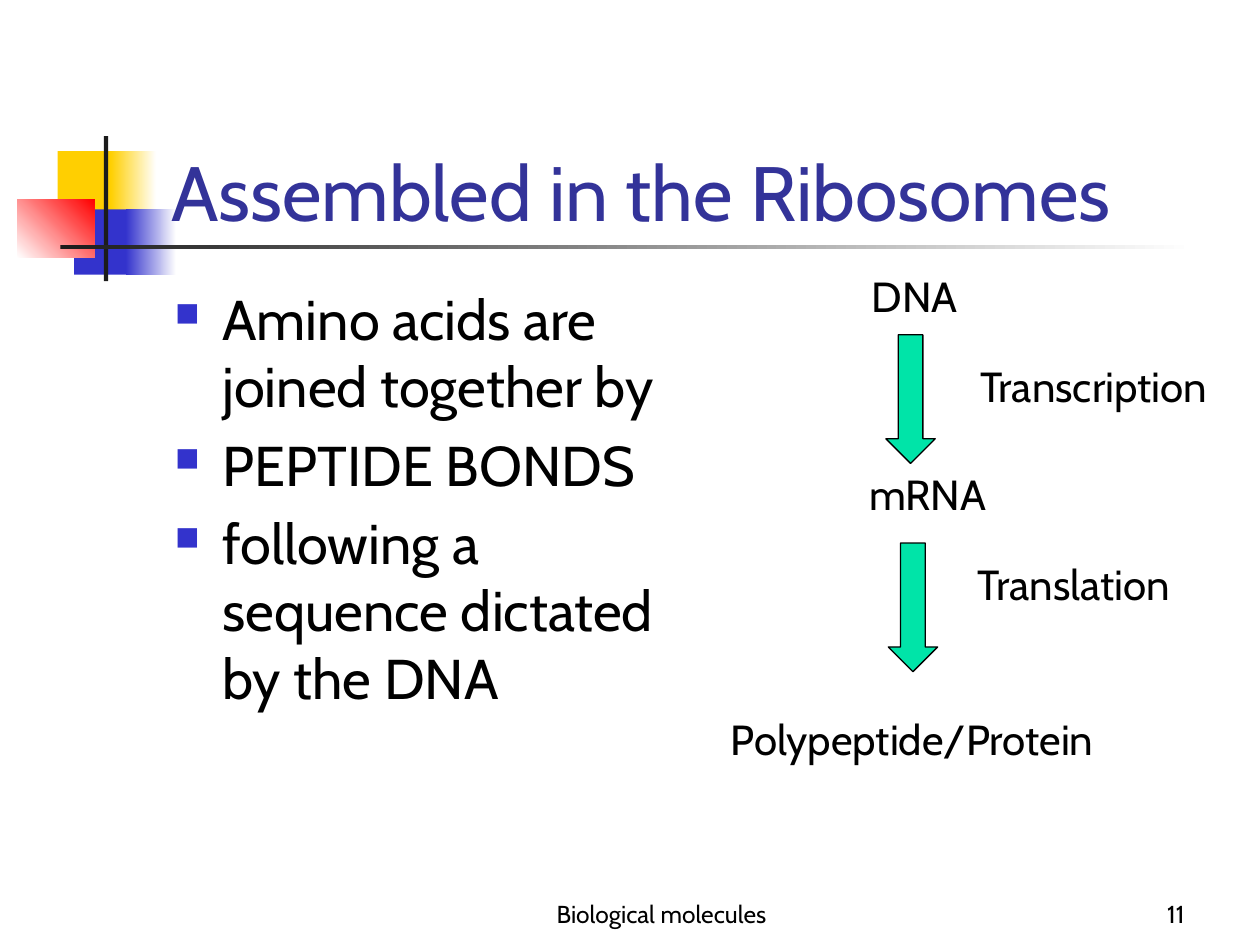
from dataclasses import dataclass
from lxml.etree import SubElement
from pptx import Presentation
from pptx.dml.color import RGBColor as RGB
from pptx.enum.shapes import MSO_SHAPE as Kind
from pptx.enum.text import MSO_ANCHOR as Anchor, PP_ALIGN as Align
from pptx.oxml.ns import qn
from pptx.util import Pt


@dataclass(frozen=True)
class Theme:
    """Hold the colours, font and type sizes."""
    font: str = "Cabin"
    ink: str = "000000"
    title: str = "333399"
    gold: str = "FFCF01"
    blue: str = "3333CC"
    red: str = "FF0000"
    dark: str = "1C1C1C"
    white: str = "FFFFFF"
    green: str = "00E4A8"
    head: int = 44
    body: int = 32
    label: int = 24
    small: int = 14


THEME = Theme()


def add_form(slide, kind, box, fill, line=None, angle=0):
    """Add a shape with a plain fill, or a gradient when fill is a pair."""
    form = slide.shapes.add_shape(kind, *map(Pt, box))
    form.shadow.inherit = False
    if isinstance(fill, tuple):
        form.fill.gradient()
        form.fill.gradient_angle = angle
        for stop, tone in zip(form.fill.gradient_stops, fill):
            stop.color.rgb = RGB.from_string(tone)
    else:
        form.fill.solid()
        form.fill.fore_color.rgb = RGB.from_string(fill)
    if line:
        form.line.color.rgb = RGB.from_string(line)
        form.line.width = Pt(0.75)
    else:
        form.line.fill.background()
    return form


def add_text(slide, box, lines, size, color=THEME.ink, anchor=Anchor.TOP, align=Align.LEFT):
    """Add a wrapped text box and return its paragraphs."""
    frame = slide.shapes.add_textbox(*map(Pt, box)).text_frame
    frame.text = "\n".join(lines)
    for name, value in {"word_wrap": True, "vertical_anchor": anchor}.items():
        setattr(frame, name, value)
    for par in frame.paragraphs:
        par.alignment = align
        for run in par.runs:
            for name, value in {"name": THEME.font, "size": Pt(size)}.items():
                setattr(run.font, name, value)
            run.font.color.rgb = RGB.from_string(color)
    return frame.paragraphs


def add_bullet(par, indent):
    """Give a paragraph a small square bullet with a hanging indent."""
    par.space_before = Pt(6.4)
    props = par._p.get_or_add_pPr()
    for name, value in {"marL": Pt(indent), "indent": -Pt(indent)}.items():
        props.set(name, str(value))
    tint = SubElement(props, qn("a:buClr"))
    SubElement(tint, qn("a:srgbClr"), val=THEME.blue)
    SubElement(props, qn("a:buSzPct"), val="60000")
    SubElement(props, qn("a:buChar"), char="■")


def add_motif(slide, box):
    """Draw the overlapping squares and the crossing rules."""
    left, top, width, height = box
    parts = [
        ((23, 8.6, 34.6, 37.4), THEME.gold, 0),
        ((53.3, 8.6, 26, 37.4), (THEME.gold, THEME.white), 0),
        ((32.4, 41.8, 33.1, 37.4), THEME.blue, 0),
        ((62, 41.8, 28.8, 37.4), (THEME.blue, THEME.white), 0),
        ((0, 36, 44, 33.5), (THEME.white, THEME.red), 45),
        ((49.4, 0, 2.5, height), THEME.dark, 0),
        ((24.5, 62.3, width - 24.5, 2.5), (THEME.dark, THEME.white), 0),
    ]
    for (x, y, wide, high), fill, angle in parts:
        add_form(slide, Kind.RECTANGLE, (left + x, top + y, wide, high), fill, angle=angle)


def add_title(slide, box):
    """Place the heading on the foot of its box."""
    add_text(slide, box, ["Assembled in the Ribosomes"], THEME.head, THEME.title, Anchor.BOTTOM)


def add_points(slide, box):
    """Place the bulleted list."""
    lines = ["Amino acids are joined together by", "PEPTIDE BONDS",
             "following a sequence dictated by the DNA"]
    for par in add_text(slide, box, lines, THEME.body):
        add_bullet(par, 27)


def add_flow(slide, box):
    """Draw the chain of molecules with an arrow for each step."""
    left, top, width, height = box
    labels = [
        ("DNA", 80.6, 0, 106.6),
        ("mRNA", 79.2, 113, 106.6),
        ("Polypeptide/Protein", 0, height - 36.5, 249),
        ("Transcription", width - 185, 51.1, 185),
        ("Translation", width - 186.4, 164.2, 185),
    ]
    for text, x, y, wide in labels:
        add_text(slide, (left + x, top + y, wide, 36.5), [text], THEME.label)
    for x, y in ((95.8, 40.1), (97.2, 159.1)):
        add_form(slide, Kind.DOWN_ARROW, (left + x, top + y, 28.2, 73.5), THEME.green, THEME.ink)


def add_footer(slide, box):
    """Place the footer name and the slide number."""
    left, top, width, height = box
    parts = [
        ("Biological molecules", 0, 228, Align.CENTER),
        ("11", width - 150, 150, Align.RIGHT),
    ]
    for text, x, wide, align in parts:
        add_text(slide, (left + x, top, wide, height), [text], THEME.small,
                 anchor=Anchor.BOTTOM, align=align)


def main():
    """Build the slide and save it."""
    deck = Presentation()
    deck.slide_width, deck.slide_height = Pt(720), Pt(540)
    slide = deck.slides.add_slide(deck.slide_layouts[6])
    add_motif(slide, (10, 77.8, 672.5, 82.8))
    add_title(slide, (90.7, 49, 613.4, 90))
    add_points(slide, (92.9, 159.1, 317.5, 324))
    add_flow(slide, (410.4, 151.2, 327.6, 289.2))
    add_footer(slide, (264, 498, 420, 36))
    deck.save("out.pptx")


if __name__ == "__main__":
    main()
